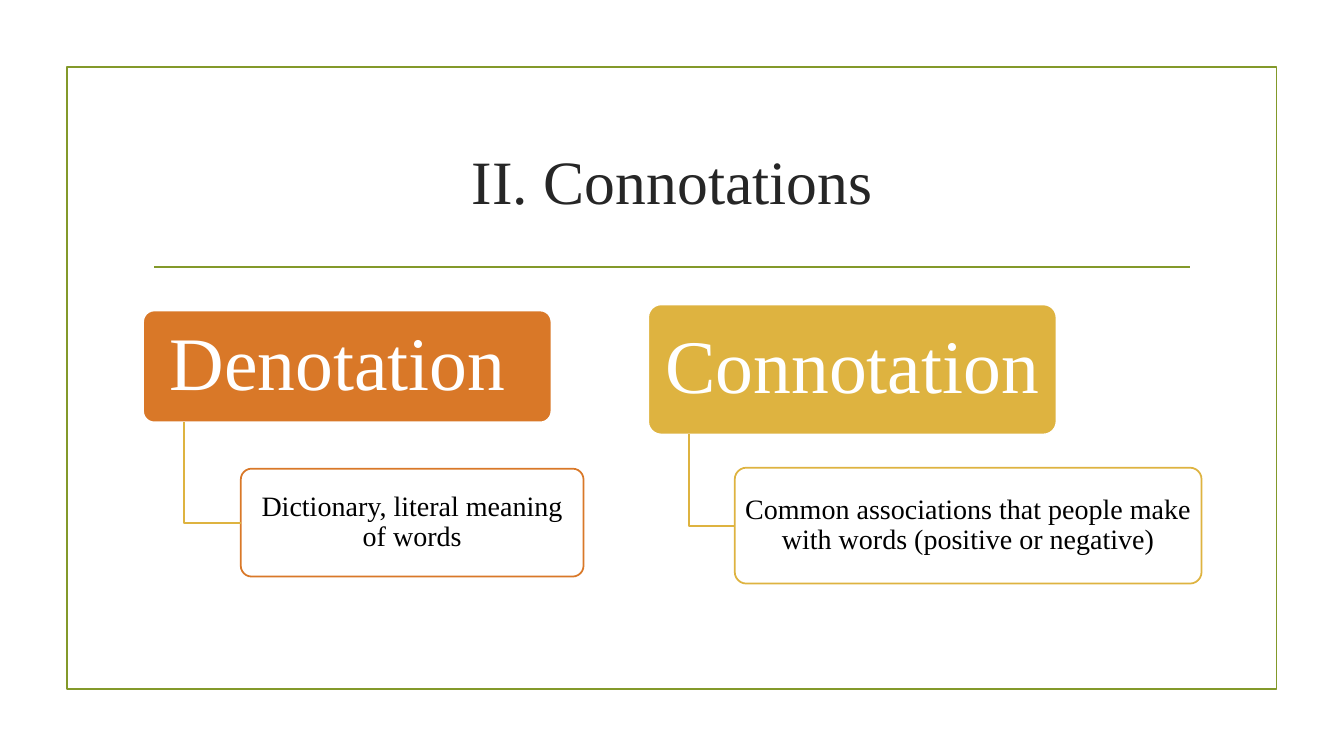
import dataclasses

import lxml.etree
import pptx
import pptx.dml.color
import pptx.enum.shapes
import pptx.enum.text
import pptx.oxml.ns
import pptx.util

WIDE = pptx.util.Inches(13.33)
HIGH = pptx.util.Inches(7.5)


@dataclasses.dataclass(frozen=True)
class Theme:
    font: str = "Times New Roman"
    green: str = "83992A"
    orange: str = "D97828"
    gold: str = "DEB340"
    white: str = "FFFFFF"
    black: str = "000000"
    ink: str = "262626"
    title: int = 44
    head: int = 54
    note: int = 20
    line: float = 1.25


THEME = Theme()


def color(code):
    return pptx.dml.color.RGBColor.from_string(code)


def across(share):
    """Turn a percentage of the slide's width into a length."""
    return int(WIDE * share / 100)


def down(share):
    """Turn a percentage of the slide's height into a length."""
    return int(HIGH * share / 100)


def place(area):
    left, top, width, height = area
    return across(left), down(top), across(width), down(height)


def outline(item, code):
    item.line.color.rgb = color(code)
    item.line.width = pptx.util.Pt(THEME.line)


def write(item, text, size, code, inset, spacing=1.0):
    """Centre one run of text in a shape or text box."""
    frame = item.text_frame
    frame.word_wrap = True
    frame.vertical_anchor = pptx.enum.text.MSO_ANCHOR.MIDDLE
    frame.margin_left = frame.margin_right = pptx.util.Inches(inset[0])
    frame.margin_top = frame.margin_bottom = pptx.util.Inches(inset[1])
    para = frame.paragraphs[0]
    para.alignment = pptx.enum.text.PP_ALIGN.CENTER
    para.line_spacing = spacing
    run = para.add_run()
    run.text = text
    run.font.name = THEME.font
    run.font.size = pptx.util.Pt(size)
    run.font.color.rgb = color(code)


def add_frame(slide, area):
    kind = pptx.enum.shapes.MSO_SHAPE.RECTANGLE
    frame = slide.shapes.add_shape(kind, *place(area))
    frame.shadow.inherit = False
    frame.fill.background()
    outline(frame, THEME.green)


def add_rule(slide, left, right, top):
    kind = pptx.enum.shapes.MSO_CONNECTOR.STRAIGHT
    rule = slide.shapes.add_connector(
        kind, across(left), down(top), across(right), down(top))
    outline(rule, THEME.green)
    lxml.etree.SubElement(
        rule.element.spPr, pptx.oxml.ns.qn("a:effectLst"))


def add_title(slide, area, text):
    box = slide.shapes.add_textbox(*place(area))
    write(box, text, THEME.title, THEME.ink, (0.1, 0.05))


def add_card(slide, area, fill, line):
    kind = pptx.enum.shapes.MSO_SHAPE.ROUNDED_RECTANGLE
    card = slide.shapes.add_shape(kind, *place(area))
    card.adjustments[0] = 0.1
    card.shadow.inherit = False
    card.fill.solid()
    card.fill.fore_color.rgb = color(fill)
    outline(card, line)
    return card


def add_elbow(slide, head, note):
    """Run from a tenth along the head's base to the note's left middle."""
    start = head.left + head.width // 10
    base = head.top + head.height
    middle = note.top + note.height // 2
    path = slide.shapes.build_freeform(start, base)
    path.add_line_segments([(start, middle), (note.left, middle)], close=False)
    elbow = path.convert_to_shape()
    elbow.shadow.inherit = False
    elbow.fill.background()
    outline(elbow, THEME.gold)


def add_branch(slide, tint, head_area, head_text, note_area, note_text):
    head = add_card(slide, head_area, tint, THEME.white)
    write(head, head_text, THEME.head, THEME.white, (0.1, 0.07), 0.9)
    note = add_card(slide, note_area, THEME.white, tint)
    write(note, note_text, THEME.note, THEME.black, (0.04, 0.03), 0.9)
    add_elbow(slide, head, note)


def main():
    deck = pptx.Presentation()
    deck.slide_width, deck.slide_height = WIDE, HIGH
    slide = deck.slides.add_slide(deck.slide_layouts[6])

    # Border, title and rule; areas are percentages of the slide
    add_frame(slide, (4.98, 8.9, 90, 82.3))
    add_rule(slide, 11.47, 88.57, 35.33)
    add_title(slide, (10.65, 14.27, 78.75, 19.07), "II. Connotations")

    # The two terms with their meanings
    add_branch(slide, THEME.orange,
               (10.65, 41.07, 30.38, 14.8), "Denotation ",
               (17.92, 62, 25.5, 14.27),
               "Dictionary, literal meaning of words")
    add_branch(slide, THEME.gold,
               (48.23, 40.27, 30.38, 17.2), "Connotation",
               (54.67, 61.87, 34.73, 15.33),
               "Common associations that people make with words "
               "(positive or negative)")

    deck.save("out.pptx")


if __name__ == "__main__":
    main()
